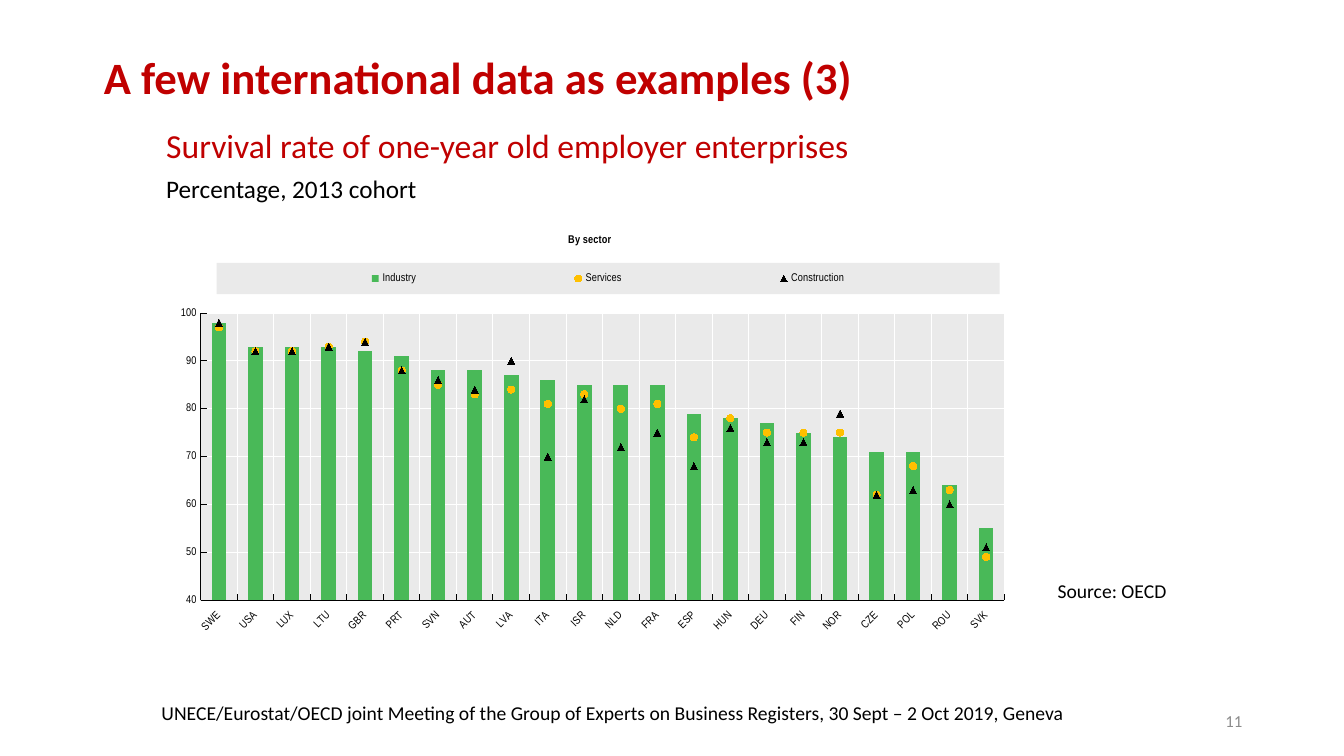
from dataclasses import dataclass
from typing import Optional

from lxml import etree
from pptx import Presentation
from pptx.chart.chart import Chart
from pptx.chart.data import CategoryChartData
from pptx.dml.color import RGBColor
from pptx.enum.chart import (XL_CHART_TYPE, XL_LEGEND_POSITION, XL_MARKER_STYLE,
                             XL_TICK_LABEL_POSITION, XL_TICK_MARK)
from pptx.enum.text import MSO_ANCHOR, PP_ALIGN
from pptx.oxml import parse_xml
from pptx.oxml.ns import nsdecls, qn
from pptx.util import Inches, Pt

RED = RGBColor(0xC0, 0x00, 0x00)
BLACK = RGBColor(0x00, 0x00, 0x00)
WHITE = RGBColor(0xFF, 0xFF, 0xFF)
GREY = RGBColor(0x8C, 0x8C, 0x8C)
PANEL = RGBColor(0xEA, 0xEA, 0xEA)
GREEN = RGBColor(0x49, 0xB9, 0x58)
AMBER = RGBColor(0xFF, 0xC0, 0x00)

LEFT, CENTER, RIGHT = PP_ALIGN.LEFT, PP_ALIGN.CENTER, PP_ALIGN.RIGHT
TOP, MIDDLE = MSO_ANCHOR.TOP, MSO_ANCHOR.MIDDLE
CIRCLE, TRIANGLE = XL_MARKER_STYLE.CIRCLE, XL_MARKER_STYLE.TRIANGLE
TICK_INSIDE = XL_TICK_MARK.INSIDE
TICK_NONE = XL_TICK_MARK.NONE

BODY_FONT = "Calibri"
CHART_FONT = "Arial Narrow"
CELL = Inches(0.1)  # one column or row of the slide grid


@dataclass(frozen=True)
class Area:
    """A place on the grid, or in percent of the chart."""
    left: float
    top: float
    width: float
    height: float

    def on_slide(self) -> list[int]:
        return [round(cells * CELL)
                for cells in (self.left, self.top, self.width, self.height)]


@dataclass(frozen=True)
class Line:
    text: str
    size: float
    color: RGBColor = BLACK
    bold: bool = False
    space_before: float = 0


@dataclass(frozen=True)
class TextBlock:
    area: Area
    lines: tuple[Line, ...]
    align: PP_ALIGN = LEFT
    anchor: MSO_ANCHOR = TOP


@dataclass(frozen=True)
class Sector:
    name: str
    rates: tuple[int, ...]
    color: RGBColor
    marker: Optional[XL_MARKER_STYLE] = None


TITLE = TextBlock(Area(9.3, 4.8, 100.4, 6.3),
                  (Line("A few international data as examples (3)", 32, RED, True),),
                  anchor=MIDDLE)
TEXT_BLOCKS = (
    TextBlock(Area(14.9, 68.7, 91.8, 4),
              (Line("UNECE/Eurostat/OECD joint Meeting of the Group of Experts on "
                    "Business Registers, 30 Sept – 2 Oct 2019, Geneva", 14),),
              CENTER, MIDDLE),
    TextBlock(Area(94.2, 69.5, 30, 4), (Line("11", 12, GREY),), RIGHT, MIDDLE),
    TextBlock(Area(15.5, 11.9, 97.9, 8.9),
              (Line("Survival rate of one-year old employer enterprises", 24, RED),
               Line("Percentage, 2013 cohort", 18, space_before=6))),
    TextBlock(Area(103.9, 56.9, 12.8, 3.4), (Line("Source: OECD", 14),)),
)

CHART_AREA = Area(17.2, 21.6, 82.6, 41.6)
PLOT_AREA = Area(0.9, 21.5, 98.9, 77.5)
LEGEND_AREA = Area(5.2, 10.8, 94, 7.4)
COUNTRIES = ("SWE USA LUX LTU GBR PRT SVN AUT LVA ITA ISR "
             "NLD FRA ESP HUN DEU FIN NOR CZE POL ROU SVK").split()
SECTORS = (
    Sector("Industry", (98, 93, 93, 93, 92, 91, 88, 88, 87, 86, 85,
                        85, 85, 79, 78, 77, 75, 74, 71, 71, 64, 55), GREEN),
    Sector("Services", (97, 92, 92, 93, 94, 88, 85, 83, 84, 81, 83,
                        80, 81, 74, 78, 75, 75, 75, 62, 68, 63, 49), AMBER, CIRCLE),
    Sector("Construction", (98, 92, 92, 93, 94, 88, 86, 84, 90, 70, 82,
                            72, 75, 68, 76, 73, 73, 79, 62, 63, 60, 51), BLACK, TRIANGLE),
)


def style_font(font, size: float, color: RGBColor, name: str, bold: bool = False) -> None:
    font.size, font.name, font.bold = Pt(size), name, bold
    font.color.rgb = color


def fill_text(frame, block: TextBlock) -> None:
    frame.word_wrap = True
    frame.vertical_anchor = block.anchor
    frame.text = "\n".join(line.text for line in block.lines)
    for para, line in zip(frame.paragraphs, block.lines):
        para.alignment = block.align
        para.space_before = Pt(line.space_before)
        for span in para.runs:
            style_font(span.font, line.size, line.color, BODY_FONT, line.bold)


def panel_fill() -> etree._Element:
    return parse_xml(f'<c:spPr {nsdecls("c", "a")}><a:solidFill>'
                     f'<a:srgbClr val="{PANEL}"/></a:solidFill>'
                     '<a:ln><a:noFill/></a:ln></c:spPr>')


def manual_layout(area: Area, target: str = "") -> etree._Element:
    parts = f'<c:layoutTarget val="{target}"/>' if target else ""
    parts += '<c:xMode val="edge"/><c:yMode val="edge"/>'
    for tag, percent in zip("xywh", (area.left, area.top, area.width, area.height)):
        parts += f'<c:{tag} val="{percent / 100:.3f}"/>'
    return parse_xml(f'<c:layout {nsdecls("c")}><c:manualLayout>{parts}'
                     '</c:manualLayout></c:layout>')


def split_off_markers(chart: Chart) -> None:
    """Move all series but the first from the columns to a line plot."""
    columns = chart.element.xpath("//c:barChart")[0]
    lines = parse_xml(f'<c:lineChart {nsdecls("c")}><c:grouping val="standard"/>'
                      '<c:varyColors val="0"/><c:marker val="1"/></c:lineChart>')
    show_markers = lines[-1]
    for series in columns.findall(qn("c:ser"))[1:]:
        for inverted in series.findall(qn("c:invertIfNegative")):
            series.remove(inverted)
        show_markers.addprevious(series)
    for axis_id in columns.findall(qn("c:axId")):
        etree.SubElement(lines, qn("c:axId")).set("val", axis_id.get("val"))
    columns.addnext(lines)


def style_series(chart: Chart) -> None:
    columns, lines = chart.plots
    columns.gap_width = 150
    columns.vary_by_categories = False
    industry, *marked = SECTORS
    fill = columns.series[0].format.fill
    fill.solid()
    fill.fore_color.rgb = industry.color
    for series, sector in zip(lines.series, marked):
        series.smooth = False
        series.format.line.fill.background()
        series.marker.style, series.marker.size = sector.marker, 5
        series.marker.format.fill.solid()
        series.marker.format.fill.fore_color.rgb = sector.color
        series.marker.format.line.fill.background()


def style_axes(chart: Chart) -> None:
    for axis in (chart.category_axis, chart.value_axis):
        axis.major_tick_mark, axis.minor_tick_mark = TICK_INSIDE, TICK_NONE
        axis.has_major_gridlines = True
        for line, color in ((axis.format.line, BLACK),
                            (axis.major_gridlines.format.line, WHITE)):
            line.color.rgb, line.width = color, Pt(0.75)
        style_font(axis.tick_labels.font, 8, BLACK, CHART_FONT)
    chart.category_axis.tick_label_position = XL_TICK_LABEL_POSITION.LOW
    chart.element.xpath("//c:catAx/c:txPr/a:bodyPr")[0].set("rot", str(-45 * 60000))
    scale = chart.value_axis
    scale.minimum_scale, scale.maximum_scale, scale.major_unit = 40, 100, 10


def style_legend(chart: Chart) -> None:
    chart.has_legend = True
    chart.legend.position = XL_LEGEND_POSITION.RIGHT
    chart.legend.include_in_layout = True
    style_font(chart.legend.font, 8, BLACK, CHART_FONT)
    overlay = chart.element.xpath("//c:legend/c:overlay")[0]
    overlay.addprevious(manual_layout(LEGEND_AREA))
    overlay.addnext(panel_fill())


def add_survival_chart(page) -> None:
    data = CategoryChartData()
    data.categories = COUNTRIES
    for sector in SECTORS:
        data.add_series(sector.name, sector.rates)
    chart = page.shapes.add_chart(XL_CHART_TYPE.COLUMN_CLUSTERED,
                                  *CHART_AREA.on_slide(), data).chart
    style_font(chart.font, 10, BLACK, BODY_FONT)
    heading = chart.chart_title.text_frame
    heading.text = "By sector"
    style_font(heading.paragraphs[0].runs[0].font, 8, BLACK, CHART_FONT, True)
    split_off_markers(chart)
    style_series(chart)
    style_axes(chart)
    style_legend(chart)
    plot = chart.element.xpath("//c:plotArea")[0]
    for layout in plot.findall(qn("c:layout")):
        plot.remove(layout)
    plot.insert(0, manual_layout(PLOT_AREA, "outer"))
    plot.append(panel_fill())


def main() -> None:
    deck = Presentation()
    deck.slide_width, deck.slide_height = Inches(13.33), Inches(7.5)
    page = deck.slides.add_slide(deck.slide_layouts[5])
    title = page.shapes.title
    title.left, title.top, title.width, title.height = TITLE.area.on_slide()
    fill_text(title.text_frame, TITLE)
    title.text_frame.paragraphs[0].line_spacing = 0.9
    for block in TEXT_BLOCKS:
        box = page.shapes.add_textbox(*block.area.on_slide())
        fill_text(box.text_frame, block)
    add_survival_chart(page)
    deck.save("out.pptx")


if __name__ == "__main__":
    main()
